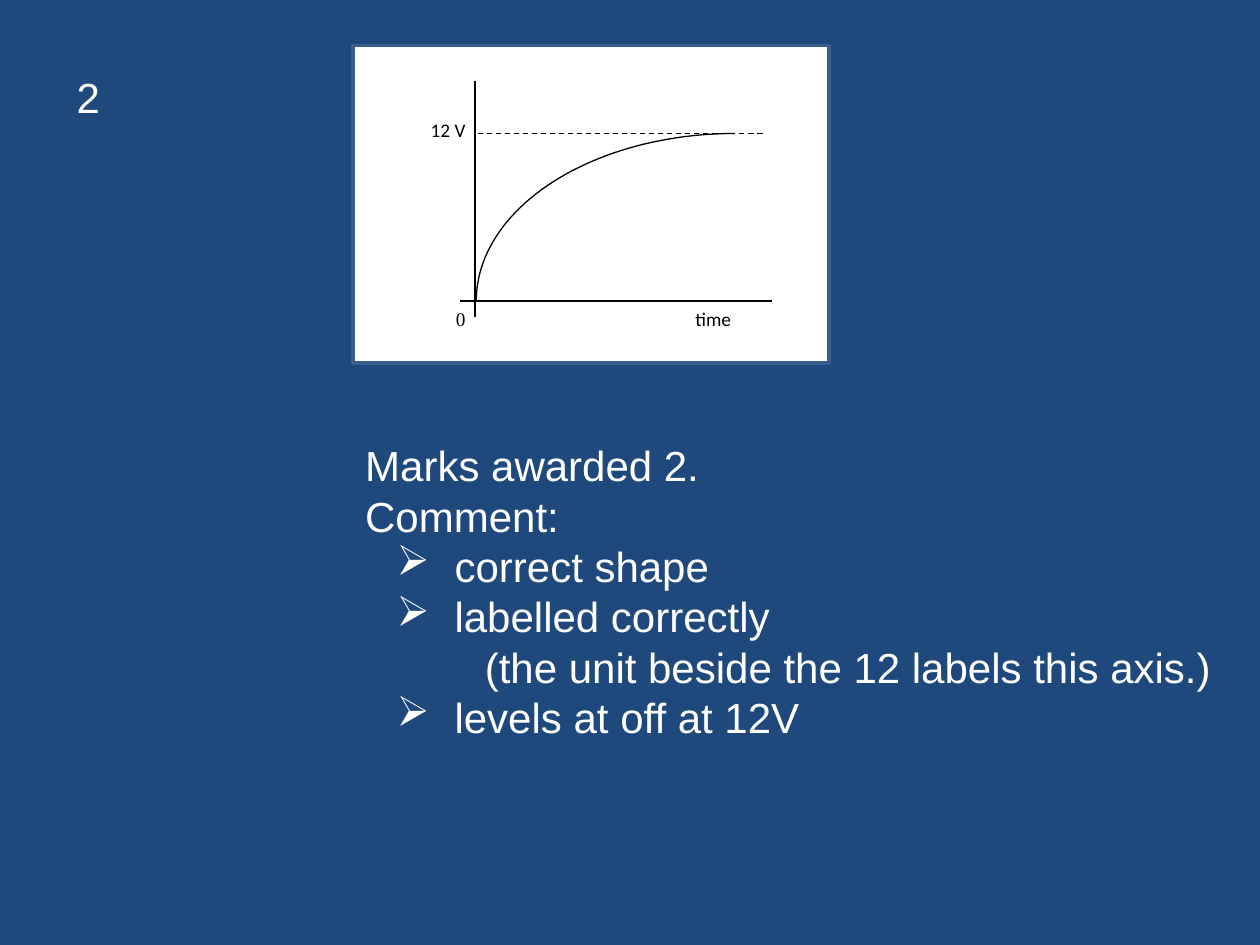
import math
from dataclasses import dataclass

from lxml import etree
from pptx import Presentation
from pptx.dml.color import RGBColor
from pptx.enum import dml, shapes, text
from pptx.oxml import ns
from pptx.util import Inches, Pt

COLOURS = {
    "background": "1F497D",
    "panel": "FFFFFF",
    "panel_border": "3A5F8C",
    "comment": "FFFFFF",
    "graph": "000000",
}
GRAPH_LINE = Pt(0.75)
CURVE_STEPS = 48


@dataclass(frozen=True)
class GraphLine:
    start: tuple[float, float]
    end: tuple[float, float]
    dashed: bool = False


@dataclass(frozen=True)
class Label:
    words: str
    left: float
    top: float
    width: float
    height: float = 0.33
    font: str = "Calibri"
    size: int = 11
    colour: str = "graph"
    space_after: int = 10
    wrap: bool = True


@dataclass(frozen=True)
class CommentLine:
    words: str
    margin: float = 0
    bullet: bool = False


GRAPH_LINES = [
    GraphLine((3.77, 0.64), (3.77, 2.52)),
    GraphLine((3.65, 2.39), (6.13, 2.39)),
    GraphLine((3.79, 1.06), (6.07, 1.06), dashed=True),
]
GRAPH_LABELS = [
    Label("0", 3.52, 2.39, 0.27, font="Times New Roman"),
    Label("12 V", 3.32, 0.89, 0.55),
    Label("time", 5.42, 2.39, 0.76),
]
QUESTION_NUMBER = Label("2", 0.51, 0.52, 0.39, 0.5, "Arial", 24, "comment", 0, False)
BULLET_MARGIN = 0.71
BULLET_HANG = 0.46
COMMENT_LINES = [
    CommentLine("Marks awarded 2."),
    CommentLine("Comment:"),
    CommentLine("correct shape", BULLET_MARGIN, True),
    CommentLine("labelled correctly", BULLET_MARGIN, True),
    CommentLine("(the unit beside the 12 labels this axis.)", 0.95),
    CommentLine("levels at off at 12V", BULLET_MARGIN, True),
]


def colour(name: str) -> RGBColor:
    return RGBColor.from_string(COLOURS[name])


def set_font(paragraph, name: str, size: int, colour_name: str) -> None:
    paragraph.font.name = name
    paragraph.font.size = Pt(size)
    paragraph.font.color.rgb = colour(colour_name)


def add_label(parent, label: Label) -> None:
    box = parent.add_textbox(Inches(label.left), Inches(label.top),
                             Inches(label.width), Inches(label.height))
    box.text_frame.word_wrap = label.wrap
    paragraph = box.text_frame.paragraphs[0]
    paragraph.text = label.words
    paragraph.space_after = Pt(label.space_after)
    set_font(paragraph, label.font, label.size, label.colour)


def add_graph_line(parent, line: GraphLine) -> None:
    connector = parent.add_connector(shapes.MSO_CONNECTOR.STRAIGHT,
                                     *map(Inches, line.start + line.end))
    connector.line.color.rgb = colour("graph")
    connector.line.width = GRAPH_LINE
    if line.dashed:
        connector.line.dash_style = dml.MSO_LINE.DASH
    etree.SubElement(connector._element.spPr, ns.qn("a:effectLst"))


def add_charging_curve(parent) -> None:
    """Draw a quarter ellipse rising from the origin to the 12 V level."""
    left, top, width, height = 3.78, 1.06, 2.05, 1.33
    angles = [math.pi / 2 * step / CURVE_STEPS for step in range(CURVE_STEPS + 1)]
    points = [(Inches(left + width * (1 - math.cos(angle))),
               Inches(top + height * (1 - math.sin(angle)))) for angle in angles]
    builder = parent.build_freeform(*points[0])
    builder.add_line_segments(points[1:], close=False)
    curve = builder.convert_to_shape()
    curve.shadow.inherit = False
    curve.fill.background()
    curve.line.color.rgb = colour("graph")
    curve.line.width = GRAPH_LINE


def add_panel(parent) -> None:
    panel = parent.add_shape(shapes.MSO_SHAPE.RECTANGLE, Inches(2.8), Inches(0.36),
                             Inches(3.78), Inches(2.52))
    panel.shadow.inherit = False
    panel.fill.solid()
    panel.fill.fore_color.rgb = colour("panel")
    panel.line.color.rgb = colour("panel_border")
    panel.line.width = Pt(2)


def add_comment(parent) -> None:
    box = parent.add_textbox(Inches(2.8), Inches(3.44), Inches(7.2), Inches(2.52))
    frame = box.text_frame
    frame.word_wrap = True
    frame.auto_size = text.MSO_AUTO_SIZE.SHAPE_TO_FIT_TEXT
    for index, line in enumerate(COMMENT_LINES):
        paragraph = frame.add_paragraph() if index else frame.paragraphs[0]
        paragraph.text = line.words
        set_font(paragraph, "Arial", 24, "comment")
        properties = paragraph._p.get_or_add_pPr()
        properties.set("marL", str(Inches(line.margin)))
        if line.bullet:
            properties.set("indent", str(-Inches(BULLET_HANG)))
            bullet = etree.Element(ns.qn("a:buChar"), char="➢")
            properties.insert(0, bullet)


def main() -> None:
    presentation = Presentation()
    presentation.slide_width = Inches(10)
    presentation.slide_height = Inches(7.5)
    slide = presentation.slides.add_slide(presentation.slide_layouts[6])
    slide.background.fill.solid()
    slide.background.fill.fore_color.rgb = colour("background")

    add_panel(slide.shapes)
    add_comment(slide.shapes)
    graph = slide.shapes.add_group_shape().shapes
    for line in GRAPH_LINES:
        add_graph_line(graph, line)
    for label in GRAPH_LABELS:
        add_label(graph, label)
    add_charging_curve(graph)
    add_label(slide.shapes, QUESTION_NUMBER)
    presentation.save("out.pptx")


if __name__ == "__main__":
    main()
